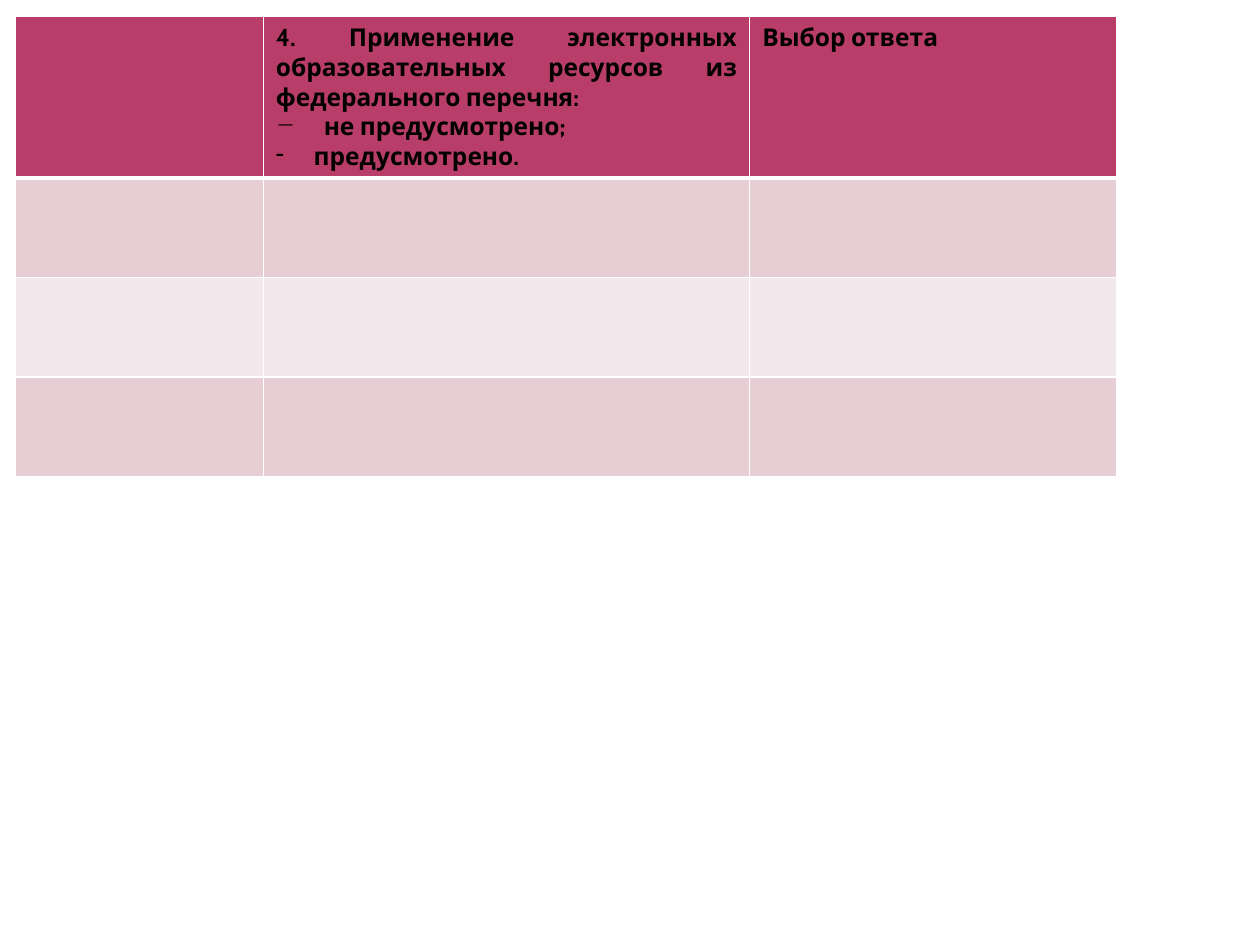
from dataclasses import dataclass
from typing import Optional

from lxml import etree
from pptx import Presentation
from pptx.dml.color import RGBColor
from pptx.enum import text
from pptx.oxml import ns
from pptx.util import Inches, Pt


@dataclass(frozen=True)
class Theme:
    font: str = "Cabin"
    size: float = 14
    ink: str = "000000"
    header: str = "B83D68"
    bands: tuple = ("E6CED4", "F3E8EB")
    border: str = "FFFFFF"
    thin: float = 1
    thick: float = 3


@dataclass(frozen=True)
class Line:
    words: str
    justified: bool = False
    bullet: Optional[str] = None
    indent: float = 0


THEME = Theme()
COLUMNS = (1.97, 3.86, 2.91)
ROWS = (1.27, 0.79, 0.79, 0.79)
HEADER = (
    (),
    (
        Line("4. Применение электронных образовательных ресурсов из федерального перечня:", True),
        Line("не предусмотрено;", True, "−", 0.38),
        Line("предусмотрено.", False, "-", 0.3),
    ),
    (Line("Выбор ответа"),),
)


def set_border(cell, side: str, width: float) -> None:
    ln = etree.SubElement(cell._tc.get_or_add_tcPr(), ns.qn(f"a:ln{side}"), w=str(Pt(width)))
    fill = etree.SubElement(ln, ns.qn("a:solidFill"))
    etree.SubElement(fill, ns.qn("a:srgbClr"), val=THEME.border)


def style_cell(cell, row: int) -> None:
    # Borders come before the fill in the cell properties
    top = THEME.thick if row == 1 else THEME.thin
    bottom = THEME.thick if row == 0 else THEME.thin
    for side, width in (("L", THEME.thin), ("R", THEME.thin), ("T", top), ("B", bottom)):
        set_border(cell, side, width)
    color = THEME.header if row == 0 else THEME.bands[(row - 1) % 2]
    cell.fill.solid()
    cell.fill.fore_color.rgb = RGBColor.from_string(color)


def write_line(p, line: Line) -> None:
    p.text = line.words
    p.alignment = text.PP_ALIGN.JUSTIFY if line.justified else text.PP_ALIGN.LEFT
    if line.bullet:
        pPr = p._p.get_or_add_pPr()
        pPr.set("marL", str(Inches(line.indent)))
        pPr.set("indent", str(-Inches(line.indent)))
        etree.SubElement(pPr, ns.qn("a:buChar"), char=line.bullet)
    for r in p.runs:
        r.font.name = THEME.font
        r.font.size = Pt(THEME.size)
        r.font.bold = True
        r.font.color.rgb = RGBColor.from_string(THEME.ink)


def write_cell(cell, lines: tuple) -> None:
    tf = cell.text_frame
    for i, line in enumerate(lines):
        write_line(tf.add_paragraph() if i else tf.paragraphs[0], line)


def main() -> None:
    prs = Presentation()
    prs.slide_width, prs.slide_height = Inches(10), Inches(7.5)
    s = prs.slides.add_slide(prs.slide_layouts[6])

    # Table grid
    table = s.shapes.add_table(
        len(ROWS), len(COLUMNS), Inches(0.12), Inches(0.13),
        Inches(sum(COLUMNS)), Inches(sum(ROWS)),
    ).table
    for column, width in zip(table.columns, COLUMNS):
        column.width = Inches(width)
    for row, height in zip(table.rows, ROWS):
        row.height = Inches(height)

    # Cell fills and borders
    for i, row in enumerate(table.rows):
        for cell in row.cells:
            style_cell(cell, i)

    # Header wording
    for cell, lines in zip(table.rows[0].cells, HEADER):
        write_cell(cell, lines)

    prs.save("out.pptx")


if __name__ == "__main__":
    main()
